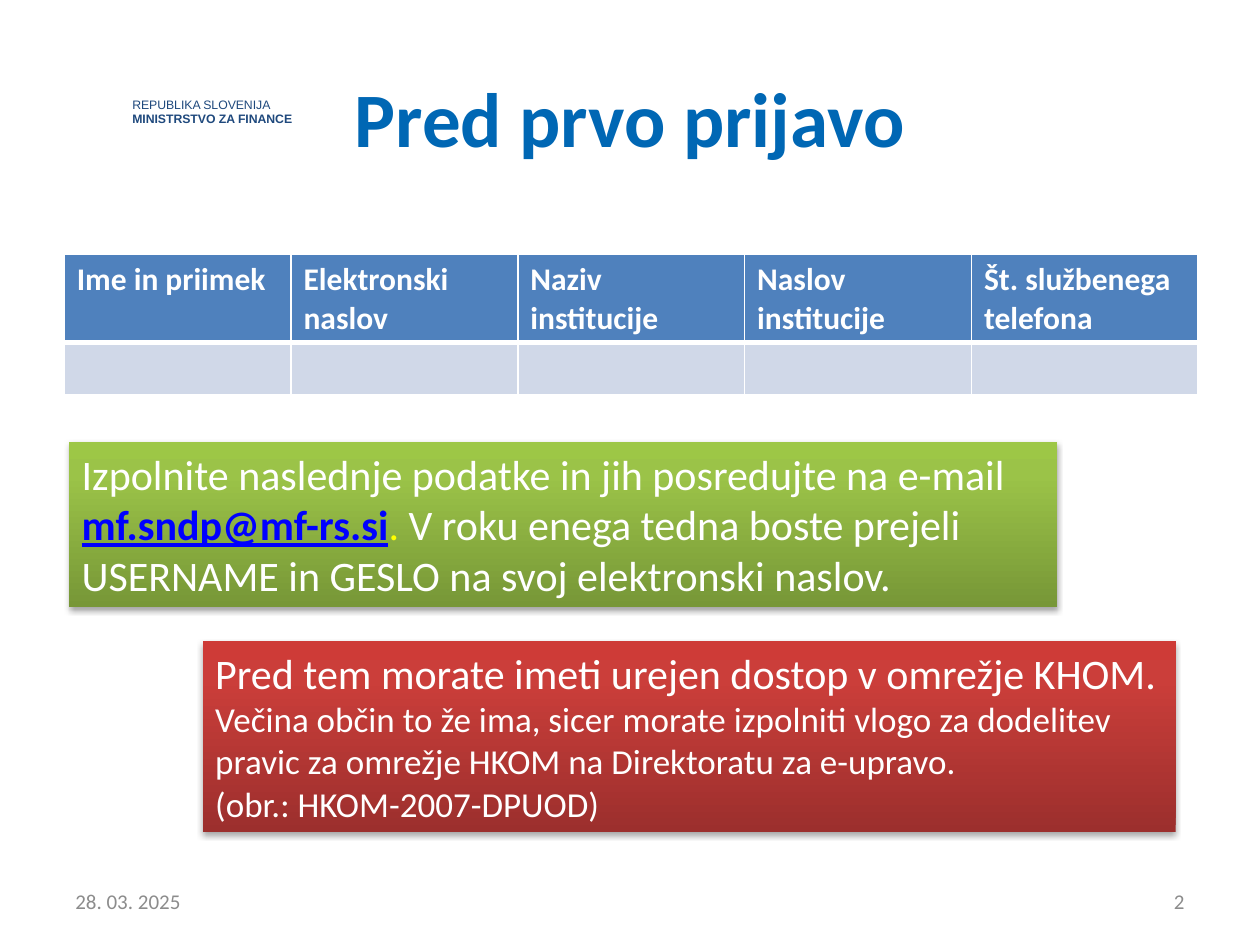
from collections import namedtuple

from lxml import etree
from pptx import Presentation
from pptx.dml.color import RGBColor
from pptx.enum.shapes import MSO_SHAPE
from pptx.enum.text import MSO_ANCHOR, PP_ALIGN
from pptx.oxml.ns import qn
from pptx.util import Inches, Pt

RECTANGLE = MSO_SHAPE.RECTANGLE
TOP, MIDDLE = MSO_ANCHOR.TOP, MSO_ANCHOR.MIDDLE
LEFT, CENTER, RIGHT = PP_ALIGN.LEFT, PP_ALIGN.CENTER, PP_ALIGN.RIGHT

WIDTH, HEIGHT = Inches(10), Inches(7.5)
WHITE, GRAY, NAVY, TITLE_BLUE = "FFFFFF", "8C8C8C", "1F497D", "0067B4"
HEADER_BLUE, ROW_BLUE, LINK_BLUE, YELLOW = "4F81BD", "D0D8E8", "0000FF", "FFFF00"
GREEN_STOPS = [(0, "779737"), (80, "9BC348"), (100, "9DC746")]
RED_STOPS = [(0, "9C2F2D"), (80, "CB3E3A"), (100, "CE3B37")]
HEADINGS = ["Ime in priimek", "Elektronski naslov", "Naziv institucije",
            "Naslov institucije", "Št. službenega telefona"]

Box = namedtuple("Box", "left top width height")
Run = namedtuple("Run", "text size color bold underline font",
                 defaults=(WHITE, False, False, "Calibri"))


def area(left, top, width, height):
    """Turn percentages of the slide into a box in slide units."""
    return Box(int(WIDTH * left / 100), int(HEIGHT * top / 100),
               int(WIDTH * width / 100), int(HEIGHT * height / 100))


def rgb(value):
    """Return the colour for a hex string."""
    return RGBColor.from_string(value)


def add_element(parent, tag, **attributes):
    """Append a drawing element with its attributes."""
    return etree.SubElement(parent, qn(tag), {k: str(v) for k, v in attributes.items()})


def write(frame, paragraphs, align=LEFT, anchor=TOP, spacing=None):
    """Fill a text frame with paragraphs, each a list of runs."""
    frame.word_wrap = True
    frame.vertical_anchor = anchor
    for index, runs in enumerate(paragraphs):
        paragraph = frame.add_paragraph() if index else frame.paragraphs[0]
        paragraph.alignment = align
        if spacing:
            paragraph.line_spacing = Pt(spacing)
        for part in runs:
            run = paragraph.add_run()
            run.text = part.text
            run.font.name, run.font.size = part.font, Pt(part.size)
            run.font.bold, run.font.underline = part.bold, part.underline
            run.font.color.rgb = rgb(part.color)


def add_label(slide, box, run, align=LEFT):
    """Place one line of text, centred vertically in the box."""
    write(slide.shapes.add_textbox(*box).text_frame, [[run]], align, MIDDLE)


def add_ministry(slide, box):
    """Place the two-line name of the ministry."""
    frame = slide.shapes.add_textbox(*box).text_frame
    frame.margin_left = frame.margin_right = frame.margin_top = frame.margin_bottom = 0
    write(frame, [[Run("REPUBLIKA SLOVENIJA", 7, NAVY, font="Arial")],
                  [Run("MINISTRSTVO ZA FINANCE", 7, NAVY, True, font="Arial")]], spacing=8.4)


def style_cell(cell, color, top, bottom):
    """Give a cell its white borders and its fill."""
    properties = cell._tc.get_or_add_tcPr()
    for side, points in (("L", 1), ("R", 1), ("T", top), ("B", bottom)):
        border = add_element(properties, f"a:ln{side}", w=Pt(points))
        add_element(add_element(border, "a:solidFill"), "a:srgbClr", val=WHITE)
    cell.fill.solid()
    cell.fill.fore_color.rgb = rgb(color)


def add_form(slide, box, headings, header_share):
    """Place the table of data to fill in, with one empty row."""
    table = slide.shapes.add_table(2, len(headings), *box).table
    table.rows[0].height = int(box.height * header_share)
    table.rows[1].height = box.height - table.rows[0].height
    for column, heading in enumerate(headings):
        table.columns[column].width = box.width // len(headings)
        style_cell(table.cell(0, column), HEADER_BLUE, 1, 3)
        style_cell(table.cell(1, column), ROW_BLUE, 3, 1)
        write(table.cell(0, column).text_frame, [[Run(heading, 18, bold=True)]])


def add_notice(slide, box, stops, paragraphs):
    """Place a shaded rectangle with a soft shadow and its message."""
    notice = slide.shapes.add_shape(RECTANGLE, *box)
    notice.line.fill.background()
    notice.fill.gradient()
    notice.fill.gradient_angle = 90
    properties = notice._element.spPr
    stop_list = properties.find(qn("a:gradFill")).find(qn("a:gsLst"))
    for old_stop in list(stop_list):
        stop_list.remove(old_stop)
    for position, color in stops:
        add_element(add_element(stop_list, "a:gs", pos=position * 1000), "a:srgbClr", val=color)
    notice.shadow.inherit = False
    shadow = add_element(properties.find(qn("a:effectLst")), "a:outerShdw", blurRad=Pt(3.1),
                         dist=Pt(1.8), dir=5400000, rotWithShape=0)
    add_element(add_element(shadow, "a:srgbClr", val="000000"), "a:alpha", val=35000)
    write(notice.text_frame, paragraphs)


def main():
    """Build and save the slide."""
    deck = Presentation()
    deck.slide_width, deck.slide_height = WIDTH, HEIGHT
    slide = deck.slides.add_slide(deck.slide_layouts[6])
    add_ministry(slide, area(10.5, 10.27, 13.2, 2.93))
    add_label(slide, area(5, 92.67, 23.3, 5.33), Run("28. 03. 2025", 12, GRAY))
    add_label(slide, area(71.7, 92.67, 23.3, 5.33), Run("2", 12, GRAY), RIGHT)
    add_label(slide, area(5, 4, 90, 16.67), Run("Pred prvo prijavo", 44, TITLE_BLUE, True), CENTER)
    add_form(slide, area(5.1, 26.93, 90, 14.8), HEADINGS, 0.63)
    add_notice(slide, area(5.5, 46.8, 78.4, 17.47), GREEN_STOPS, [[
        Run("Izpolnite naslednje podatke in jih posredujte na e-mail ", 24),
        Run("mf.sndp@mf-rs.si", 24, LINK_BLUE, True, True),
        Run(".", 24, YELLOW),
        Run(" V roku enega tedna boste prejeli USERNAME in GESLO "
            "na svoj elektronski naslov.", 24)]])
    add_notice(slide, area(16.1, 67.87, 77.2, 20.13), RED_STOPS, [
        [Run("Pred tem morate imeti urejen dostop v omrežje KHOM.", 24)],
        [Run("Večina občin to že ima, sicer morate izpolniti vlogo za dodelitev "
             "pravic za omrežje HKOM na Direktoratu za e-upravo.", 20)],
        [Run("(obr.: HKOM-2007-DPUOD)", 20)]])
    deck.save("out.pptx")


if __name__ == "__main__":
    main()
